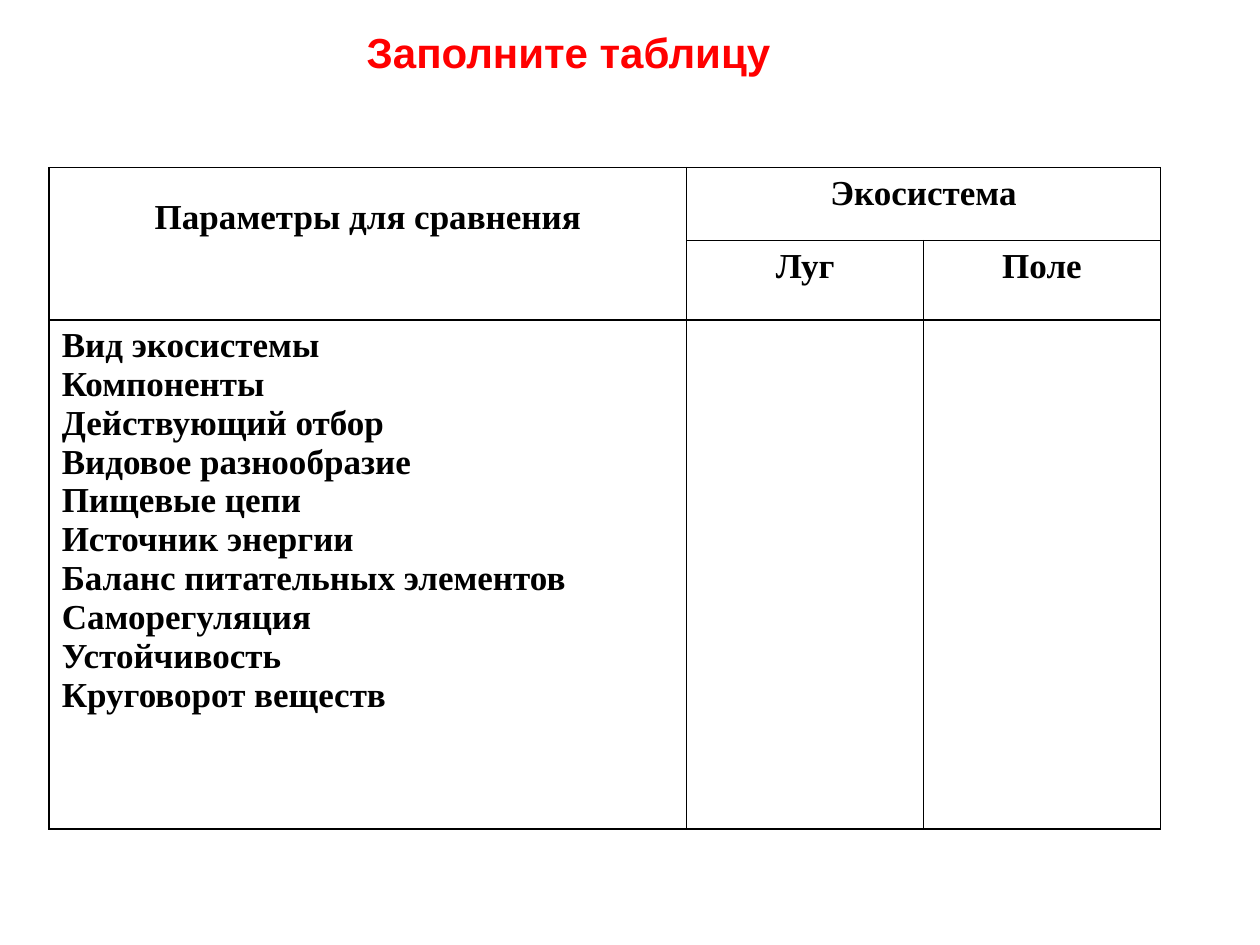
"""Build a slide with a table comparing the ecosystems of a meadow and a field."""
from dataclasses import dataclass

from lxml import etree
from pptx import Presentation
from pptx.dml.color import RGBColor
from pptx.enum.text import MSO_ANCHOR, MSO_AUTO_SIZE, PP_ALIGN
from pptx.oxml.ns import qn
from pptx.util import Inches, Pt

CENTER, JUSTIFY, LEFT = PP_ALIGN.CENTER, PP_ALIGN.JUSTIFY, PP_ALIGN.LEFT
TOP = MSO_ANCHOR.TOP
NO_AUTOFIT = MSO_AUTO_SIZE.NONE
TITLE_ONLY = 5


@dataclass(frozen=True)
class Theme:
    title_font: str = "Arial"
    table_font: str = "Times New Roman"
    title_size: int = 24
    table_size: int = 20
    title_color: str = "FF0000"
    ink: str = "000000"
    paper: str = "FFFFFF"
    border: int = 1


THEME = Theme()
SLIDE_SIZE = (10, 7.5)
TITLE = "Заполните таблицу"
TITLE_BOX = (2.81, 0.16, 4.45, 0.51)
TABLE_ORIGIN = (0.39, 1.33)
COLUMNS = (5.06, 1.88, 1.88)
ROWS = (0.58, 0.63, 4.04)
MERGES = [((0, 0), (1, 0)), ((0, 1), (0, 2))]
HEADER_DROP = 0.24
CRITERIA = [
    "Вид экосистемы",
    "Компоненты",
    "Действующий отбор",
    "Видовое разнообразие",
    "Пищевые цепи",
    "Источник энергии",
    "Баланс питательных элементов",
    "Саморегуляция",
    "Устойчивость",
    "Круговорот веществ",
]
CELLS = {
    (0, 0): (["Параметры для сравнения"], CENTER),
    (0, 1): (["Экосистема"], CENTER),
    (1, 1): (["Луг"], CENTER),
    (1, 2): (["Поле"], CENTER),
    (2, 0): (CRITERIA, JUSTIFY),
}


def write(text_frame, lines, alignment, font, size, color):
    for index, line in enumerate(lines):
        paragraph = text_frame.add_paragraph() if index else text_frame.paragraphs[0]
        paragraph.alignment = alignment
        run = paragraph.add_run()
        run.text = line
        run.font.name = font
        run.font.size = Pt(size)
        run.font.bold = True
        run.font.color.rgb = RGBColor.from_string(color)


def style_cell(cell):
    properties = cell._tc.get_or_add_tcPr()
    for side in ("lnL", "lnR", "lnT", "lnB"):
        line = etree.SubElement(properties, qn(f"a:{side}"), w=str(Pt(THEME.border)))
        fill = etree.SubElement(line, qn("a:solidFill"))
        etree.SubElement(fill, qn("a:srgbClr"), val=THEME.ink)
    cell.fill.solid()
    cell.fill.fore_color.rgb = RGBColor.from_string(THEME.paper)
    cell.vertical_anchor = TOP


def add_title(slide):
    title = slide.shapes.title
    title.left, title.top, title.width, title.height = map(Inches, TITLE_BOX)
    frame = title.text_frame
    frame.word_wrap = True
    frame.auto_size = NO_AUTOFIT
    frame.vertical_anchor = TOP
    write(frame, [TITLE], LEFT, THEME.title_font, THEME.title_size, THEME.title_color)


def add_comparison(slide):
    box = map(Inches, (*TABLE_ORIGIN, sum(COLUMNS), sum(ROWS)))
    table = slide.shapes.add_table(len(ROWS), len(COLUMNS), *box).table
    table.first_row = table.horz_banding = False
    for column, width in zip(table.columns, COLUMNS):
        column.width = Inches(width)
    for row, height in zip(table.rows, ROWS):
        row.height = Inches(height)
    for cell in table.iter_cells():
        style_cell(cell)
    for first, last in MERGES:
        table.cell(*first).merge(table.cell(*last))
    for place, (lines, alignment) in CELLS.items():
        write(table.cell(*place).text_frame, lines, alignment,
              THEME.table_font, THEME.table_size, THEME.ink)
    table.cell(0, 0).margin_top = Inches(HEADER_DROP)


def main():
    presentation = Presentation()
    presentation.slide_width, presentation.slide_height = map(Inches, SLIDE_SIZE)
    slide = presentation.slides.add_slide(presentation.slide_layouts[TITLE_ONLY])
    add_title(slide)
    add_comparison(slide)
    presentation.save("out.pptx")


if __name__ == "__main__":
    main()
